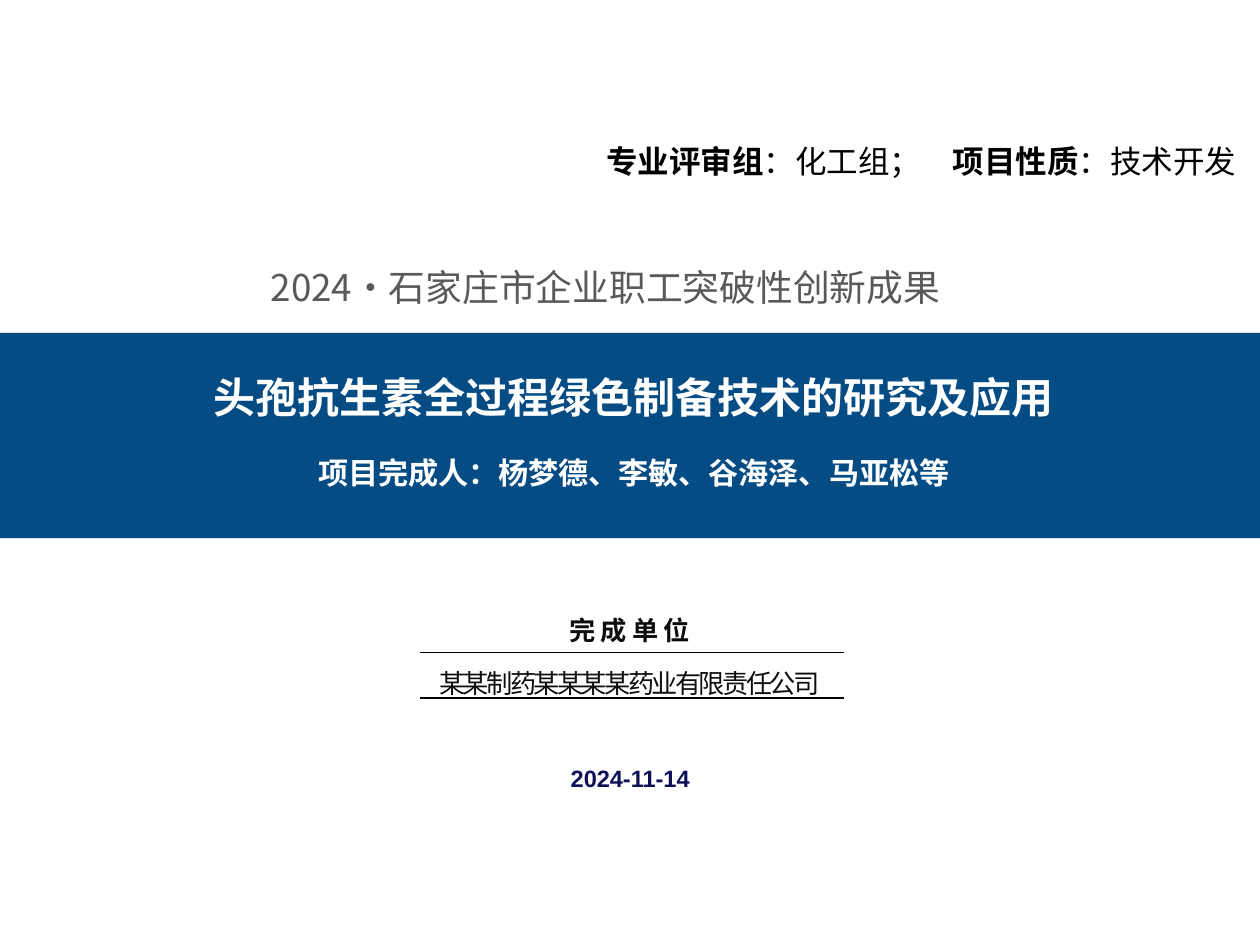
"""Build the title slide of a project review."""
from lxml import etree
from pptx import Presentation
from pptx.dml.color import RGBColor
from pptx.enum.shapes import MSO_CONNECTOR, MSO_SHAPE
from pptx.enum.text import PP_ALIGN
from pptx.oxml.ns import qn
from pptx.util import Cm, Pt

MID, RIGHT = PP_ALIGN.CENTER, PP_ALIGN.RIGHT
RECT, LINE = MSO_SHAPE.RECTANGLE, MSO_CONNECTOR.STRAIGHT
BLUE = RGBColor(0x05, 0x4B, 0x84)
NAVY = RGBColor(0x0F, 0x11, 0x58)
WHITE = RGBColor(0xFF, 0xFF, 0xFF)
BLACK = RGBColor(0, 0, 0)
INK = RGBColor(0x0D, 0x0D, 0x0D)
GRAY = RGBColor(0x59, 0x59, 0x59)
NOTO, ARIAL = "Noto Sans CJK SC", "Arial"

TEXTS = [
    ((3.4, 7.49, 18.75, 1.63), 0, MID, 1, 24, WHITE,
     [[("头孢抗生素全过程绿色制备技术的研究及应用", NOTO, True, 0)]]),
    ((3.25, 8.79, 19.05, 1.37), 0, MID, 1.5, 17.2, WHITE,
     [[("项目完成人：杨梦德、李敏、谷海泽、马亚松等", NOTO, True, 0)]]),
    ((9.53, 15.27, 6.35, 0.84), 0.13, MID, 1, 13.5, NAVY,
     [[("2024-11-14", ARIAL, True, 0)]]),
    ((7.24, 11.84, 10.9, 3.45), 0.13, MID, Pt(30), 15, INK,
     [[("完成单位", ARIAL, True, 3)],
      [("某某制药某某某某药业有限责任公司", NOTO, False, -1.5)]]),
    ((4.85, 4.9, 14.71, 1.6), 0, MID, 1.5, 21, GRAY,
     [[("2024·石家庄市企业职工突破性创新成果", NOTO, False, 0)]]),
    ((7.47, 2.49, 17.7, 1.4), 0, RIGHT, 1.5, 18, BLACK,
     [[("专业评审组", NOTO, True, 0), ("：化工组；　", NOTO, False, 0),
       ("项目性质", NOTO, True, 0), ("：技术开发", NOTO, False, 0)]]),
]
RULES = [13.16, 14.07]


def add_run(para, part, size, color):
    words, face, bold, gap = part
    run = para.add_run()
    run.text = words
    font = run.font
    font.name, font.size, font.bold = face, Pt(size), bold
    font.color.rgb = color
    props = run._r.get_or_add_rPr()
    if face == NOTO:
        etree.SubElement(props, qn("a:ea")).set("typeface", face)
    if gap:
        props.set("spc", str(int(gap * 100)))


def add_text(slide, box, inset, align, gap, size, color, paras):
    frame = slide.shapes.add_textbox(*map(Cm, box)).text_frame
    frame.word_wrap = True
    frame.margin_top = frame.margin_bottom = Cm(inset)
    for i, parts in enumerate(paras):
        para = frame.add_paragraph() if i else frame.paragraphs[0]
        para.alignment, para.line_spacing = align, gap
        for part in parts:
            add_run(para, part, size, color)


def add_rule(slide, y):
    rule = slide.shapes.add_connector(LINE, Cm(8.46), Cm(y), Cm(17.02), Cm(y))
    rule.line.color.rgb, rule.line.width = BLACK, Pt(0.75)
    etree.SubElement(rule._element.spPr, qn("a:effectLst"))


def main():
    deck = Presentation()
    deck.slide_width, deck.slide_height = Cm(25.4), Cm(19.05)
    slide = deck.slides.add_slide(deck.slide_layouts[6])
    band = slide.shapes.add_shape(RECT, 0, Cm(6.71), deck.slide_width, Cm(4.14))
    band.shadow.inherit = False
    band.fill.solid()
    band.fill.fore_color.rgb = BLUE
    band.line.fill.background()
    for text in TEXTS:
        add_text(slide, *text)
    for y in RULES:
        add_rule(slide, y)
    deck.save("out.pptx")


if __name__ == "__main__":
    main()
